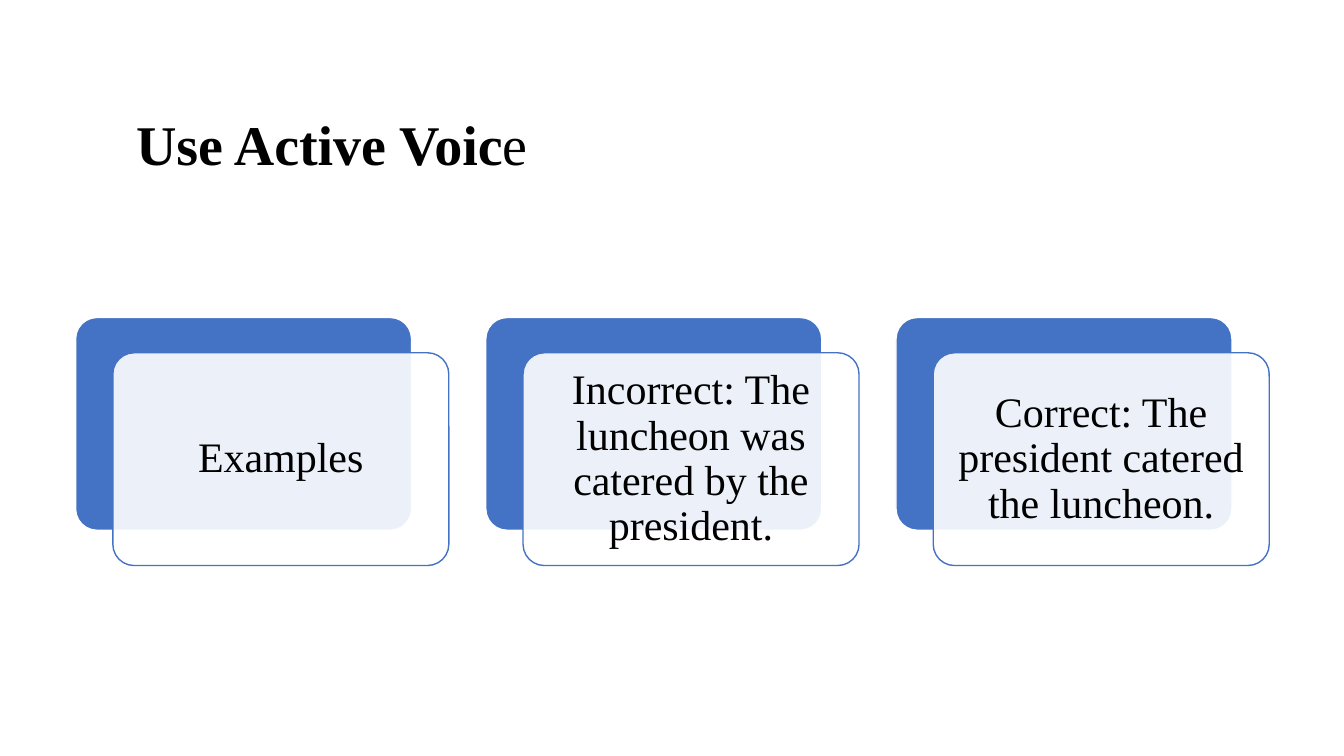
"""Build a slide with a title and three layered cards about active voice."""
from lxml import etree
from pptx import Presentation
from pptx.dml.color import RGBColor
from pptx.enum import shapes, text
from pptx.oxml import ns
from pptx.util import Pt

COLOURS = {"blue": "4472C4", "white": "FFFFFF", "black": "000000"}
FONT = "Times New Roman"
CARD_TEXTS = [
    "Examples",
    "Incorrect: The luncheon was catered by the president.",
    "Correct: The president catered the luncheon.",
]
CARD_WIDTH, CARD_HEIGHT = 240, 152
LEFT, TOP, PITCH = 54, 226.8, 293
OFFSET_X, OFFSET_Y = 26.6, 25.2


def add_card(page, left, top, fill, line):
    """Add one rounded card with the given fill and outline."""
    card = page.shapes.add_shape(
        shapes.MSO_SHAPE.ROUNDED_RECTANGLE,
        Pt(left), Pt(top), Pt(CARD_WIDTH), Pt(CARD_HEIGHT))
    card.adjustments[0] = 0.1
    card.shadow.inherit = False
    card.fill.solid()
    card.fill.fore_color.rgb = RGBColor.from_string(COLOURS[fill])
    card.line.color.rgb = RGBColor.from_string(COLOURS[line])
    card.line.width = Pt(1)
    return card


def style_span(span, size, bold):
    """Set the font of one run."""
    span.font.name = FONT
    span.font.size = Pt(size)
    span.font.bold = bold
    span.font.color.rgb = RGBColor.from_string(COLOURS["black"])


deck = Presentation()
deck.slide_width, deck.slide_height = Pt(960), Pt(540)
page = deck.slides.add_slide(deck.slide_layouts[5])

title = page.shapes.title
title.left, title.top, title.width, title.height = Pt(90), Pt(78), Pt(780), Pt(54)
title.text_frame.vertical_anchor = text.MSO_ANCHOR.MIDDLE
para = title.text_frame.paragraphs[0]
para.alignment = text.PP_ALIGN.LEFT
para.line_spacing = 0.9
for words, bold in [("Use Active Voic", True), ("e", False)]:
    span = para.add_run()
    span.text = words
    style_span(span, 40, bold)

for index, words in enumerate(CARD_TEXTS):
    left = LEFT + index * PITCH
    add_card(page, left, TOP, "blue", "white")
    front = add_card(page, left + OFFSET_X, TOP + OFFSET_Y, "white", "blue")
    fill_colour = front.fill._xPr.find(ns.qn("a:solidFill"))[0]
    etree.SubElement(fill_colour, ns.qn("a:alpha"), val="90000")

    frame = front.text_frame
    frame.word_wrap = True
    frame.vertical_anchor = text.MSO_ANCHOR.MIDDLE
    frame.margin_left = frame.margin_right = Pt(8.6)
    frame.margin_top = frame.margin_bottom = Pt(8.6)
    frame.text = words
    para = frame.paragraphs[0]
    para.alignment = text.PP_ALIGN.CENTER
    para.line_spacing = 0.9
    style_span(para.runs[0], 30, False)

deck.save("out.pptx")
